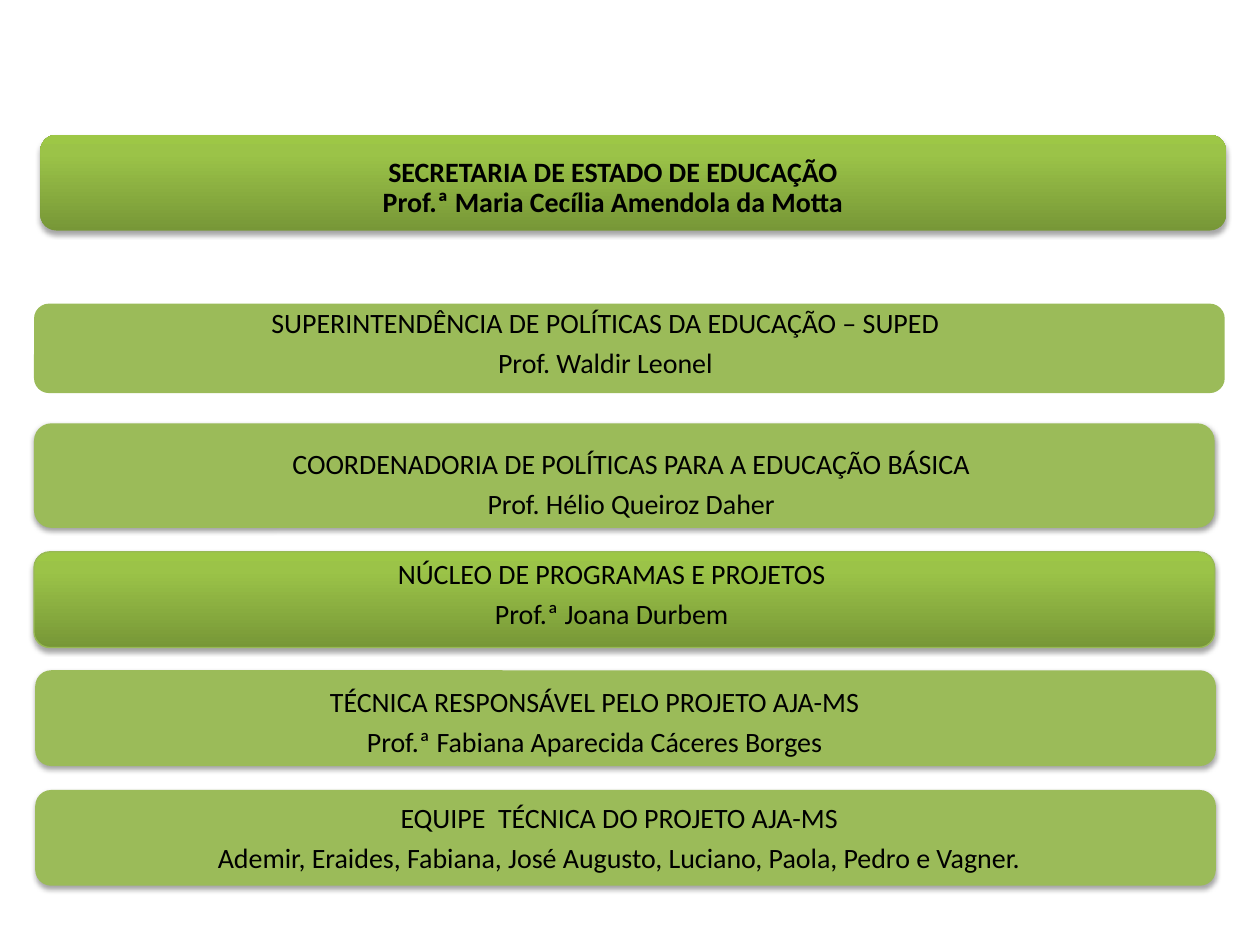
from lxml.etree import SubElement
from pptx import Presentation
from pptx.dml.color import RGBColor
from pptx.enum.shapes import MSO_SHAPE
from pptx.enum.text import MSO_ANCHOR, PP_ALIGN
from pptx.oxml.ns import qn
from pptx.util import Inches, Pt

COLORS = {"bar": "9BBB59", "edge": "98B955", "text": "000000", "shadow": "000000"}
GRADIENT = [(0, "779737"), (80, "9BC348"), (100, "9DC746")]

LEVELS = [
    {"lines": ["SECRETARIA DE ESTADO DE EDUCAÇÃO\vProf.ª Maria Cecília Amendola da Motta"],
     "bar": (0.32, 1.07, 9.41, 0.76), "label": (0.2, 1.15, 9.33, 0.69),
     "gradient": True, "shadow": (35, 1.8), "bold": True},
    {"lines": ["SUPERINTENDÊNCIA DE POLÍTICAS DA EDUCAÇÃO – SUPED", "Prof. Waldir Leonel"],
     "bar": (0.27, 2.41, 9.45, 0.71), "label": (0.27, 2.48, 9.27, 0.51),
     "heading_indent": 0.2},
    {"lines": ["COORDENADORIA DE POLÍTICAS PARA A EDUCAÇÃO BÁSICA", "Prof. Hélio Queiroz Daher"],
     "bar": (0.27, 3.36, 9.37, 0.83), "label": (0.98, 3.36, 8.06, 0.98),
     "shadow": (38, 1.6)},
    {"lines": ["NÚCLEO DE PROGRAMAS E PROJETOS", "Prof.ª Joana Durbem"],
     "bar": (0.27, 4.38, 9.37, 0.76), "label": (0.27, 4.38, 9.17, 0.69),
     "gradient": True, "edge": True, "shadow": (35, 1.8)},
    {"lines": ["TÉCNICA RESPONSÁVEL PELO PROJETO AJA-MS", "Prof.ª Fabiana Aparecida Cáceres Borges"],
     "bar": (0.28, 5.32, 9.37, 0.76), "label": (0.35, 5.4, 8.74, 0.68),
     "shadow": (35, 1.8)},
    {"lines": ["EQUIPE  TÉCNICA DO PROJETO AJA-MS",
               "Ademir, Eraides, Fabiana, José Augusto, Luciano, Paola, Pedro e Vagner."],
     "bar": (0.28, 6.27, 9.37, 0.76), "label": (0.27, 6.35, 9.29, 0.63),
     "shadow": (35, 1.8)},
]


def rgb(name):
    return RGBColor.from_string(COLORS[name])


def add_shadow(effects, opacity, distance, blur=3.1):
    shadow = SubElement(effects, qn("a:outerShdw"), blurRad=str(Pt(blur)),
                        dist=str(Pt(distance)), dir="5400000", rotWithShape="0")
    color = SubElement(shadow, qn("a:srgbClr"), val=COLORS["shadow"])
    SubElement(color, qn("a:alpha"), val=str(opacity * 1000))


def fill_gradient(fill, properties):
    fill.gradient()
    fill.gradient_angle = 90
    stops = properties.find(".//" + qn("a:gsLst"))
    for stop in list(stops):
        stops.remove(stop)
    for position, color in GRADIENT:
        stop = SubElement(stops, qn("a:gs"), pos=str(position * 1000))
        SubElement(stop, qn("a:srgbClr"), val=color)


def add_bar(slide, level):
    bar = slide.shapes.add_shape(MSO_SHAPE.ROUNDED_RECTANGLE, *map(Inches, level["bar"]))
    properties = bar._element.spPr
    if level.get("gradient"):
        fill_gradient(bar.fill, properties)
    else:
        bar.fill.solid()
        bar.fill.fore_color.rgb = rgb("bar")
    if level.get("edge"):
        bar.line.color.rgb = rgb("edge")
        bar.line.width = Pt(0.75)
    else:
        bar.line.fill.background()
    bar.shadow.inherit = False
    if "shadow" in level:
        add_shadow(properties.find(qn("a:effectLst")), *level["shadow"])


def add_label(slide, level):
    frame = slide.shapes.add_textbox(*map(Inches, level["label"])).text_frame
    frame.word_wrap = True
    frame.vertical_anchor = MSO_ANCHOR.MIDDLE
    frame.margin_left = frame.margin_right = Inches(0.07)
    frame.margin_top = frame.margin_bottom = Inches(0.03)
    for index, line in enumerate(level["lines"]):
        paragraph = frame.paragraphs[0] if index == 0 else frame.add_paragraph()
        paragraph.text = line
        paragraph.alignment = PP_ALIGN.CENTER
        paragraph.line_spacing = 0.9
        if index:
            paragraph.space_before = Pt(5.5)
        elif "heading_indent" in level:
            paragraph._p.get_or_add_pPr().set("marR", str(Inches(level["heading_indent"])))
        font = paragraph.font
        font.name, font.size, font.bold = "Calibri", Pt(16), level.get("bold", False)
        font.color.rgb = rgb("text")
        if level.get("bold"):
            for run in paragraph.runs:
                effects = SubElement(run._r.get_or_add_rPr(), qn("a:effectLst"))
                add_shadow(effects, 40, 3, blur=4)


def main():
    presentation = Presentation()
    presentation.slide_width, presentation.slide_height = Inches(10), Inches(7.5)
    slide = presentation.slides.add_slide(presentation.slide_layouts[6])
    for level in LEVELS:
        add_bar(slide, level)
        add_label(slide, level)
    presentation.save("out.pptx")


if __name__ == "__main__":
    main()
